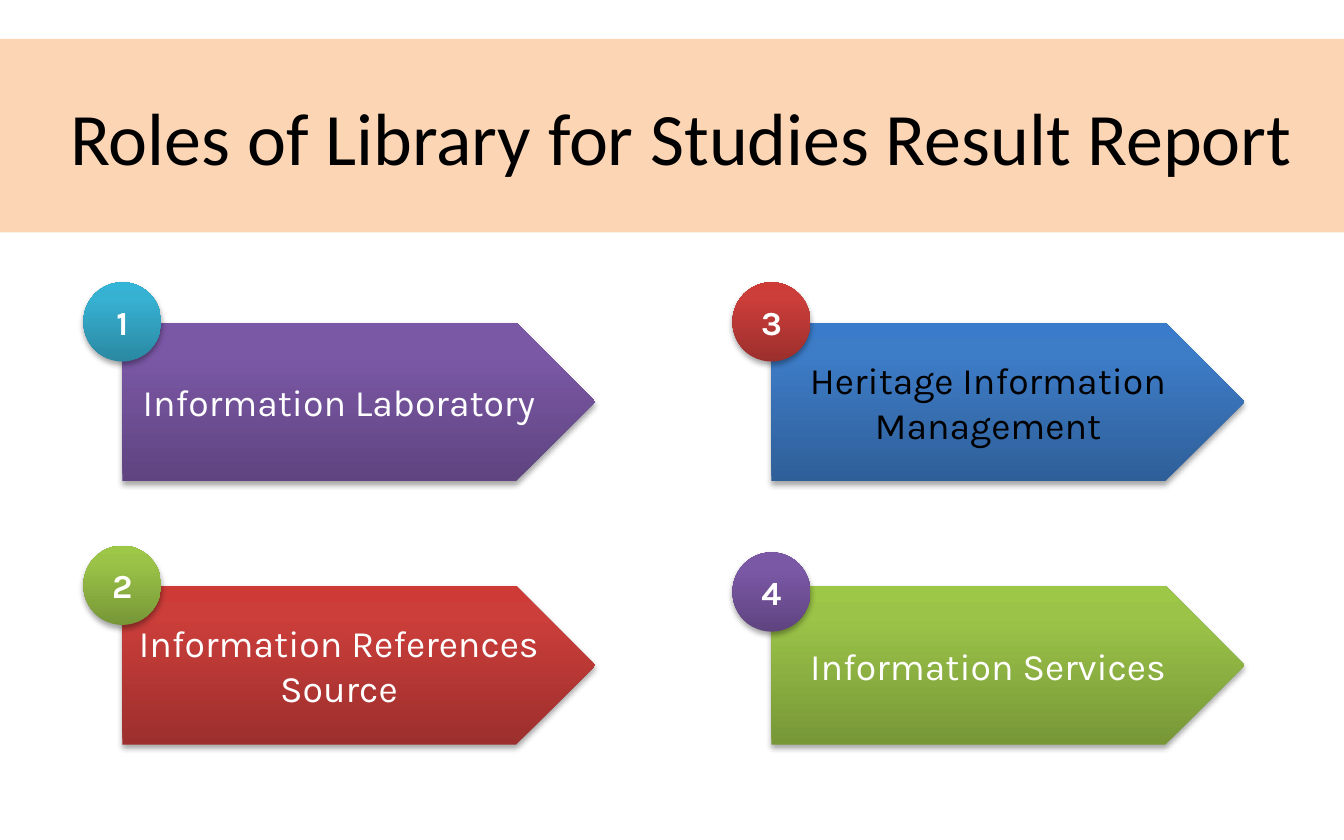
from lxml import etree
from pptx import Presentation
from pptx.dml.color import RGBColor
from pptx.enum.shapes import MSO_SHAPE
from pptx.enum.text import MSO_ANCHOR, PP_ALIGN
from pptx.oxml import parse_xml
from pptx.oxml.ns import nsdecls
from pptx.util import Pt

PX = 9144  # 100 px to the inch
SLIDE_WIDTH, SLIDE_HEIGHT = 1000, 625

RECTANGLE, PLATE, OVAL = MSO_SHAPE.RECTANGLE, MSO_SHAPE.PENTAGON, MSO_SHAPE.OVAL
CENTER, MIDDLE = PP_ALIGN.CENTER, MSO_ANCHOR.MIDDLE

BLACK = RGBColor(0x00, 0x00, 0x00)
WHITE = RGBColor(0xFF, 0xFF, 0xFF)
PEACH = RGBColor(0xFC, 0xD5, 0xB5)


def shades(*codes):
    return [RGBColor.from_string(code) for code in codes]


# Shades run from the bottom edge to the top edge
STOPS = (0, 80, 100)
PURPLE = shades("5F4480", "7B58A6", "7C57A8")
RED = shades("9C2F2D", "CB3E3A", "CE3B37")
BLUE = shades("2F5F99", "3D7CC7", "3A7CCB")
GREEN = shades("779737", "9BC348", "9DC746")
TEAL = shades("2A88A2", "37B1D2", "34B4D6")

TITLE = "Roles of Library for Studies Result Report"
TITLE_BOX = (-7, 29, 1028, 144)
# label, label colour, plate shades, badge shades, badge drop; filled column by column
ROLES = [
    ("Information Laboratory", WHITE, PURPLE, TEAL, 0),
    ("Information References Source", WHITE, RED, GREEN, 0),
    ("Heritage Information Management", BLACK, BLUE, RED, 0),
    ("Information Services", WHITE, GREEN, PURPLE, 5),
]
ROWS = 2
GRID_LEFT, GRID_TOP = 91, 240
COLUMN_STEP, ROW_STEP = 483, 196
PLATE_SIZE = (352, 118)
BADGE_SIZE = (58, 59)
BADGE_OFFSET = (-29, -30)

TITLE_FONT = {"name": "Calibri", "size": Pt(39.6), "bold": False}
LABEL_FONT = {"name": "Karla", "size": Pt(20), "bold": False}
BADGE_FONT = {"name": "Karla", "size": Pt(18), "bold": True}


def add_block(slide, kind, box, text, font_format, color):
    shape = slide.shapes.add_shape(kind, *(length * PX for length in box))
    shape.shadow.inherit = False
    shape.line.fill.background()
    frame = shape.text_frame
    frame.word_wrap = True
    frame.vertical_anchor = MIDDLE
    paragraph = frame.paragraphs[0]
    paragraph.alignment = CENTER
    run = paragraph.add_run()
    run.text = text
    for name, value in font_format.items():
        setattr(run.font, name, value)
    run.font.color.rgb = color
    return shape


def add_glossy_block(slide, kind, box, text, font_format, color, gradient):
    """Add a block with a three-stop upward gradient and a soft drop shadow."""
    shape = add_block(slide, kind, box, text, font_format, color)
    stops = "".join(
        f'<a:gs pos="{stop * 1000}"><a:srgbClr val="{shade}"/></a:gs>'
        for stop, shade in zip(STOPS, gradient)
    )
    properties = shape.element.spPr
    properties.find("{*}prstGeom").addnext(parse_xml(
        f'<a:gradFill {nsdecls("a")} rotWithShape="1"><a:gsLst>{stops}</a:gsLst>'
        '<a:lin ang="16200000" scaled="0"/></a:gradFill>'
    ))
    effects = properties.find("{*}effectLst")
    effects.append(parse_xml(
        f'<a:outerShdw {nsdecls("a")} blurRad="{Pt(3.1)}" dist="{Pt(1.8)}" '
        'dir="5400000" rotWithShape="0"><a:srgbClr val="000000">'
        '<a:alpha val="35000"/></a:srgbClr></a:outerShdw>'
    ))
    etree.cleanup_namespaces(properties)


def plate_corner(index):
    column, row = divmod(index, ROWS)
    return GRID_LEFT + column * COLUMN_STEP, GRID_TOP + row * ROW_STEP


def main():
    presentation = Presentation()
    presentation.slide_width = SLIDE_WIDTH * PX
    presentation.slide_height = SLIDE_HEIGHT * PX
    slide = presentation.slides.add_slide(presentation.slide_layouts[6])

    banner = add_block(slide, RECTANGLE, TITLE_BOX, TITLE, TITLE_FONT, BLACK)
    banner.fill.solid()
    banner.fill.fore_color.rgb = PEACH

    for index, (label, color, plate_shades, badge_shades, drop) in enumerate(ROLES):
        left, top = plate_corner(index)
        add_glossy_block(slide, PLATE, (left, top, *PLATE_SIZE), label,
                         LABEL_FONT, color, plate_shades)
        badge_box = (left + BADGE_OFFSET[0], top + BADGE_OFFSET[1] + drop, *BADGE_SIZE)
        add_glossy_block(slide, OVAL, badge_box, str(index + 1),
                         BADGE_FONT, WHITE, badge_shades)

    presentation.save("out.pptx")


if __name__ == "__main__":
    main()
